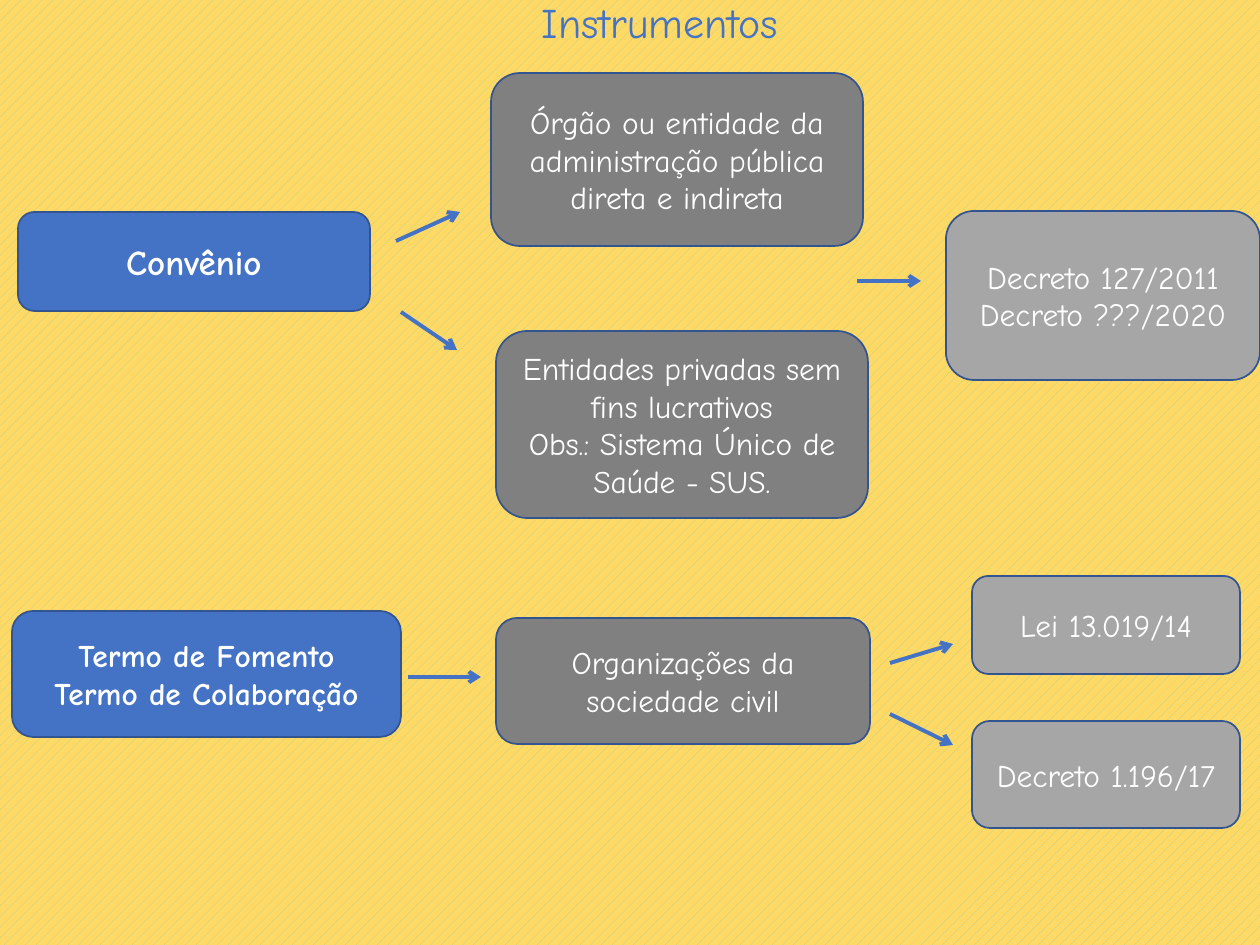
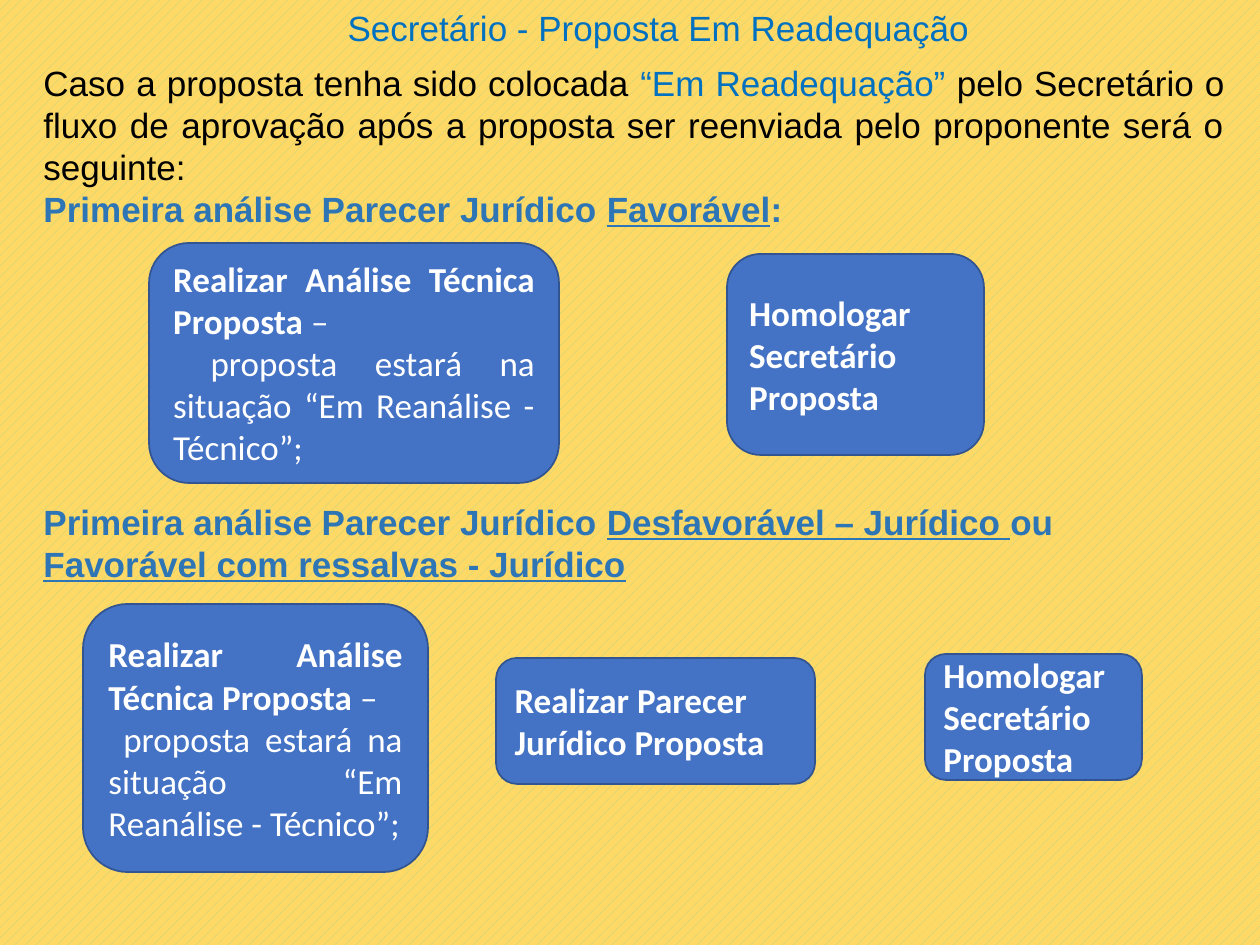
from lxml.etree import SubElement
from pptx import Presentation
from pptx.dml.color import RGBColor as RGB
from pptx.enum.dml import MSO_PATTERN as PAT
from pptx.enum.shapes import MSO_CONNECTOR as LINK, MSO_SHAPE as FORM
from pptx.enum.text import MSO_ANCHOR as ANCHOR, MSO_AUTO_SIZE as FIT, PP_ALIGN as ALIGN
from pptx.oxml.ns import qn
from pptx.util import Pt

HUES = {
    "sand": "FFD966", "leaf": "A9D18E", "blue": "4472C4", "navy": "325491",
    "dark": "808080", "pale": "A6A6A6", "white": "FFFFFF", "black": "000000",
    "sky": "0070C0", "steel": "2E75B6",
}
hue = {name: RGB.from_string(code) for name, code in HUES.items()}
LEFT, MID, JUST = ALIGN.LEFT, ALIGN.CENTER, ALIGN.JUSTIFY


def px(*nums):
    return [round(n * 914400 / 126) for n in nums]


def fill_text(frame, paras, face, size, tone, align, bold=False):
    for i, runs in enumerate(paras):
        para = frame.paragraphs[0] if i == 0 else frame.add_paragraph()
        para.alignment = align
        font = para.font
        font.name, font.size, font.bold = face, Pt(size), bold
        font.color.rgb = hue[tone]
        for text, style in [(runs, {})] if isinstance(runs, str) else runs:
            run = para.add_run()
            run.text = text
            if "tone" in style:
                run.font.color.rgb = hue[style["tone"]]
            if "bold" in style:
                run.font.bold = style["bold"]
            if "line" in style:
                run.font.underline = style["line"]


prs = Presentation()
prs.slide_width, prs.slide_height = px(1260, 945)

heads = [
    ("Instrumentos", (529, -10, 296, 63), "Comic Neue", 24, "blue"),
    ("Secretário - Proposta Em Readequação", (335, 0, 662, 55), "Arial", 20, "sky"),
]
slides = []
for text, spot, face, size, tone in heads:
    slide = prs.slides.add_slide(prs.slide_layouts[5])
    back = slide.background.fill
    back.patterned()
    back.pattern = PAT.DASHED_UPWARD_DIAGONAL
    back.fore_color.rgb, back.back_color.rgb = hue["leaf"], hue["sand"]
    title = slide.shapes.title
    title.left, title.top, title.width, title.height = px(*spot)
    frame = title.text_frame
    frame.auto_size = FIT.NONE
    frame.vertical_anchor = ANCHOR.TOP
    fill_text(frame, [text], face, size, tone, LEFT)
    slides.append(slide)
tools, flow = slides

under = {"line": True}
notes = [
    ((31, 55, 1206, 267), "black", JUST, False, [
        [("Caso a proposta tenha sido colocada ", {}),
         ("“Em Readequação” ", {"tone": "sky"}),
         ("pelo Secretário o fluxo de aprovação após a proposta ser reenviada "
          "pelo proponente será o seguinte:", {})]]),
    ((31, 494, 1206, 97), "steel", LEFT, True, [
        [("Primeira análise Parecer Jurídico ", {}),
         ("Desfavorável – Jurídico ", under),
         ("ou ", {}),
         ("Favorável com ressalvas - Jurídico", under)]]),
]
for spot, tone, align, bold, paras in notes:
    frame = flow.shapes.add_textbox(*px(*spot)).text_frame
    frame.word_wrap = True
    fill_text(frame, paras, "Arial", 20, tone, align, bold)
    if align == JUST:
        para = frame.add_paragraph()
        para.alignment = align
        para.font.name, para.font.size, para.font.bold = "Arial", Pt(20), True
        para.font.color.rgb = hue["steel"]
        for text, line in [("Primeira análise Parecer Jurídico ", False),
                           ("Favorável", True), (":", False)]:
            run = para.add_run()
            run.text, run.font.underline = text, line

study = [
    [("Realizar Análise Técnica Proposta ", {"bold": True}), ("–", {})],
    " proposta estará na situação “Em Reanálise - Técnico”;",
]
sign = ["Homologar Secretário", "Proposta"]
comic, plain = "Comic Neue", "Calibri"
boxes = [
    (tools, (496, 331, 372, 187), "dark", comic, 18, MID, False,
     ["Entidades privadas sem fins lucrativos", "Obs.: Sistema Único de Saúde - SUS."]),
    (tools, (491, 73, 372, 173), "dark", comic, 18, MID, False,
     ["Órgão ou entidade da administração pública direta e indireta"]),
    (tools, (496, 618, 374, 126), "dark", comic, 18, MID, False,
     ["Organizações da sociedade civil"]),
    (tools, (946, 211, 314, 169), "pale", comic, 18, MID, False,
     ["Decreto 127/2011", "Decreto ???/2020"]),
    (tools, (972, 576, 268, 98), "pale", comic, 18, MID, False, ["Lei 13.019/14"]),
    (tools, (972, 721, 268, 107), "pale", comic, 18, MID, False, ["Decreto 1.196/17"]),
    (tools, (18, 212, 352, 99), "blue", comic, 20, MID, True, ["Convênio"]),
    (tools, (12, 611, 389, 126), "blue", comic, 18, MID, True,
     ["Termo de Fomento", "Termo de Colaboração"]),
    (flow, (149, 243, 410, 240), "blue", plain, 20, JUST, False, study),
    (flow, (727, 254, 257, 201), "blue", plain, 20, LEFT, True, sign),
    (flow, (83, 604, 345, 268), "blue", plain, 20, JUST, False, study),
    (flow, (496, 658, 319, 126), "blue", plain, 20, LEFT, True,
     ["Realizar Parecer Jurídico Proposta"]),
    (flow, (925, 654, 217, 126), "blue", plain, 20, LEFT, True, sign),
]
for slide, spot, paint, face, size, align, bold, paras in boxes:
    box = slide.shapes.add_shape(FORM.ROUNDED_RECTANGLE, *px(*spot))
    box.shadow.inherit = False
    box.fill.solid()
    box.fill.fore_color.rgb = hue[paint]
    box.line.color.rgb = hue["navy"]
    box.line.width = Pt(1)
    frame = box.text_frame
    frame.word_wrap = True
    frame.vertical_anchor = ANCHOR.MIDDLE
    fill_text(frame, paras, face, size, "white", align, bold)

arrows = [
    (401, 312, 457, 350), (396, 241, 460, 212), (857, 281, 921, 281),
    (890, 663, 953, 644), (408, 677, 481, 677), (890, 714, 953, 745),
]
for ends in arrows:
    arrow = tools.shapes.add_connector(LINK.STRAIGHT, *px(*ends))
    arrow.line.color.rgb = hue["blue"]
    arrow.line.width = Pt(2.25)
    props = arrow._element.spPr
    SubElement(props.find(qn("a:ln")), qn("a:tailEnd"), type="arrow")
    SubElement(props, qn("a:effectLst"))

prs.save("out.pptx")
